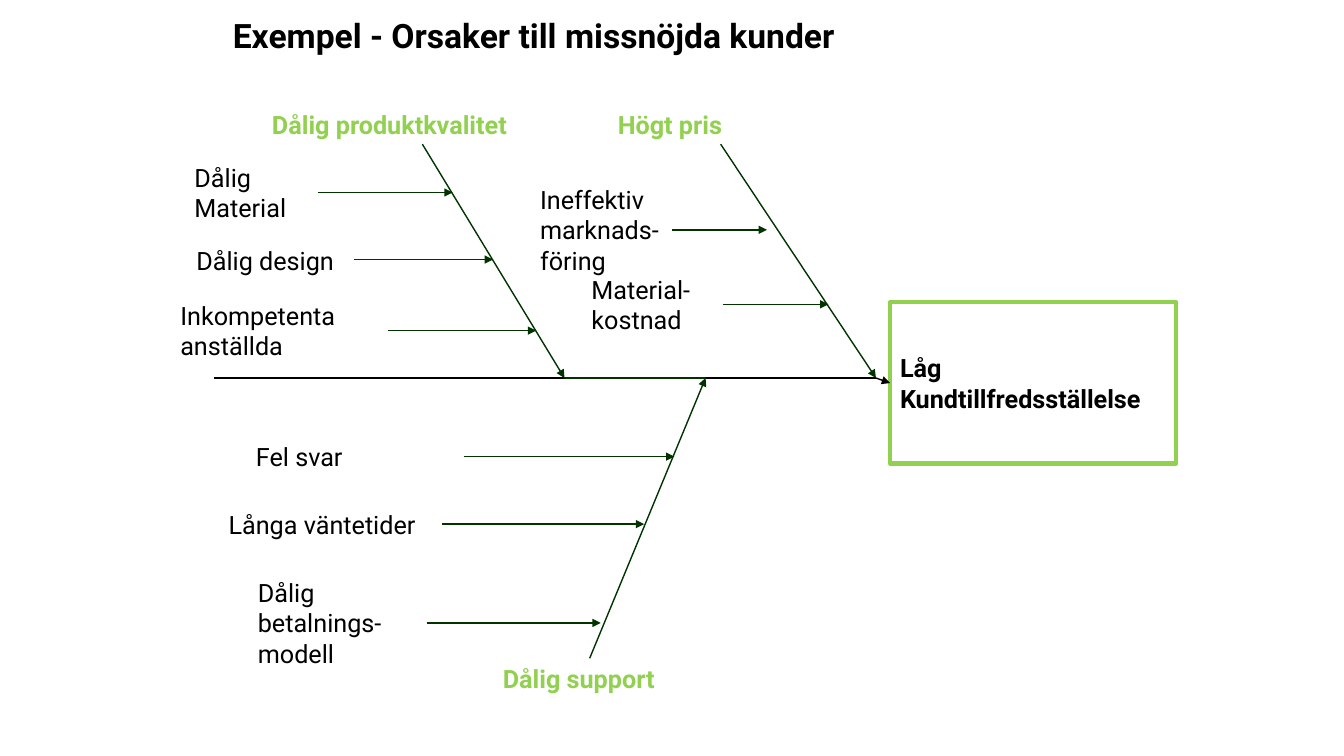
from pptx import Presentation
from pptx.dml.color import RGBColor
from pptx.enum.shapes import MSO_CONNECTOR as Link, MSO_SHAPE as Shape
from pptx.enum.text import MSO_ANCHOR as Anchor, MSO_AUTO_SIZE as Fit, PP_ALIGN as Align
from pptx.oxml.ns import qn
from pptx.util import Pt
from lxml.etree import SubElement

LIME, FOREST, BLACK = "92D050", "003300", "000000"
SPINE_Y = 270
LINE_HEIGHT, PADDING = 21.6, 7.2

TITLE = ("Exempel - Orsaker till missnöjda kunder", 159.1, 7.2, 589, 36)
EFFECT = (["Låg", "Kundtillfredsställelse"], 635.8, 216, 204.5, 115.2)

CATEGORIES = [
    {
        "label": ("Dålig produktkvalitet", 187.2, 74.2, 229.7),
        "bone": (301.7, 103, 403.2),
        "causes": [
            (["Dålig", "Material"], 131.8, 112.3, 95, 2, (226.8, 323.3, 137.5)),
            (["Dålig design"], 133.2, 171.4, 120.2, 1, (252.7, 352.1, 185.4)),
            (["Inkompetenta", "anställda"], 121.7, 211, 154.8, 2, (277.2, 383, 236.2)),
        ],
    },
    {
        "label": ("Högt pris", 434.2, 74.2, 161.3),
        "bone": (514.8, 103, 625.7),
        "causes": [
            (["Ineffektiv marknads-föring"], 378.7, 128.2, 100.8, 3, (480.2, 547.9, 164.2)),
            (["Material-kostnad"], 415.4, 192.2, 100.8, 2, (516.2, 591.8, 217.4)),
        ],
    },
    {
        "label": ("Dålig support", 352.1, 470.2, 138.2),
        "bone": (421.2, 470.2, 504),
        "causes": [
            (["Fel svar"], 175.7, 311.8, 154.8, 1, (331.2, 481.7, 326.2)),
            (["Långa väntetider"], 156.2, 360, 159.1, 1, (315.4, 460.1, 374.4)),
            (["Dålig betalnings-modell"], 177.1, 409, 139, 3, (305.3, 429.1, 445)),
        ],
    },
]
SPINE = [(152.6, 403.2, BLACK), (403.2, 504, FOREST), (504, 625.7, BLACK)]


def color(value):
    return RGBColor.from_string(value)


def apply(target, values):
    for name, value in values.items():
        setattr(target, name, value)


def write(shape, lines, shade=BLACK, bold=False, size=18, **frame_format):
    frame = shape.text_frame
    apply(frame, {"word_wrap": True, "vertical_anchor": Anchor.TOP, **frame_format})
    frame.text = "\n".join(lines)
    for para in frame.paragraphs:
        apply(para, {"alignment": Align.LEFT, "space_before": Pt(0)})
        for span in para.runs:
            apply(span.font, {"name": "Roboto", "size": Pt(size), "bold": bold})
            span.font.color.rgb = color(shade)


def add_label(lines, left, top, width, rows=1, **text_format):
    height = PADDING + LINE_HEIGHT * rows
    box = page.shapes.add_textbox(Pt(left), Pt(top), Pt(width), Pt(height))
    write(box, lines, **text_format)


def add_line(x1, y1, x2, y2, shade=FOREST, arrow=True):
    line = page.shapes.add_connector(Link.STRAIGHT, Pt(x1), Pt(y1), Pt(x2), Pt(y2))
    line.line.color.rgb = color(shade)
    line.line.width = Pt(1)
    if arrow:
        SubElement(line.line._get_or_add_ln(), qn("a:tailEnd"), type="triangle")
    SubElement(line._element.spPr, qn("a:effectLst"))
    return line


deck = Presentation()
apply(deck, {"slide_width": Pt(960), "slide_height": Pt(540)})
page = deck.slides.add_slide(deck.slide_layouts[5])

text, left, top, width, height = TITLE
title = page.shapes.title
apply(title, {"left": Pt(left), "top": Pt(top), "width": Pt(width), "height": Pt(height)})
write(title, [text], bold=True, size=24, auto_size=Fit.NONE)

lines, left, top, width, height = EFFECT
effect = page.shapes.add_shape(Shape.RECTANGLE, Pt(left), Pt(top), Pt(width), Pt(height))
effect.shadow.inherit = False
effect.fill.background()
effect.line.color.rgb = color(LIME)
effect.line.width = Pt(3)
write(effect, lines, bold=True, word_wrap=False, vertical_anchor=Anchor.MIDDLE)

for start, end, shade in SPINE:
    add_line(start, SPINE_Y, end, SPINE_Y, shade, arrow=False)
tip = add_line(SPINE[-1][1], SPINE_Y, left, top + height / 2, BLACK)
tip.end_connect(effect, 1)

for category in CATEGORIES:
    name, *place = category["label"]
    add_label([name], *place, shade=LIME, bold=True)
    start_x, start_y, end_x = category["bone"]
    add_line(start_x, start_y, end_x, SPINE_Y)
    for lines, left, top, width, rows, (start, end, y) in category["causes"]:
        add_label(lines, left, top, width, rows)
        add_line(start, y, end, y)

deck.save("out.pptx")
